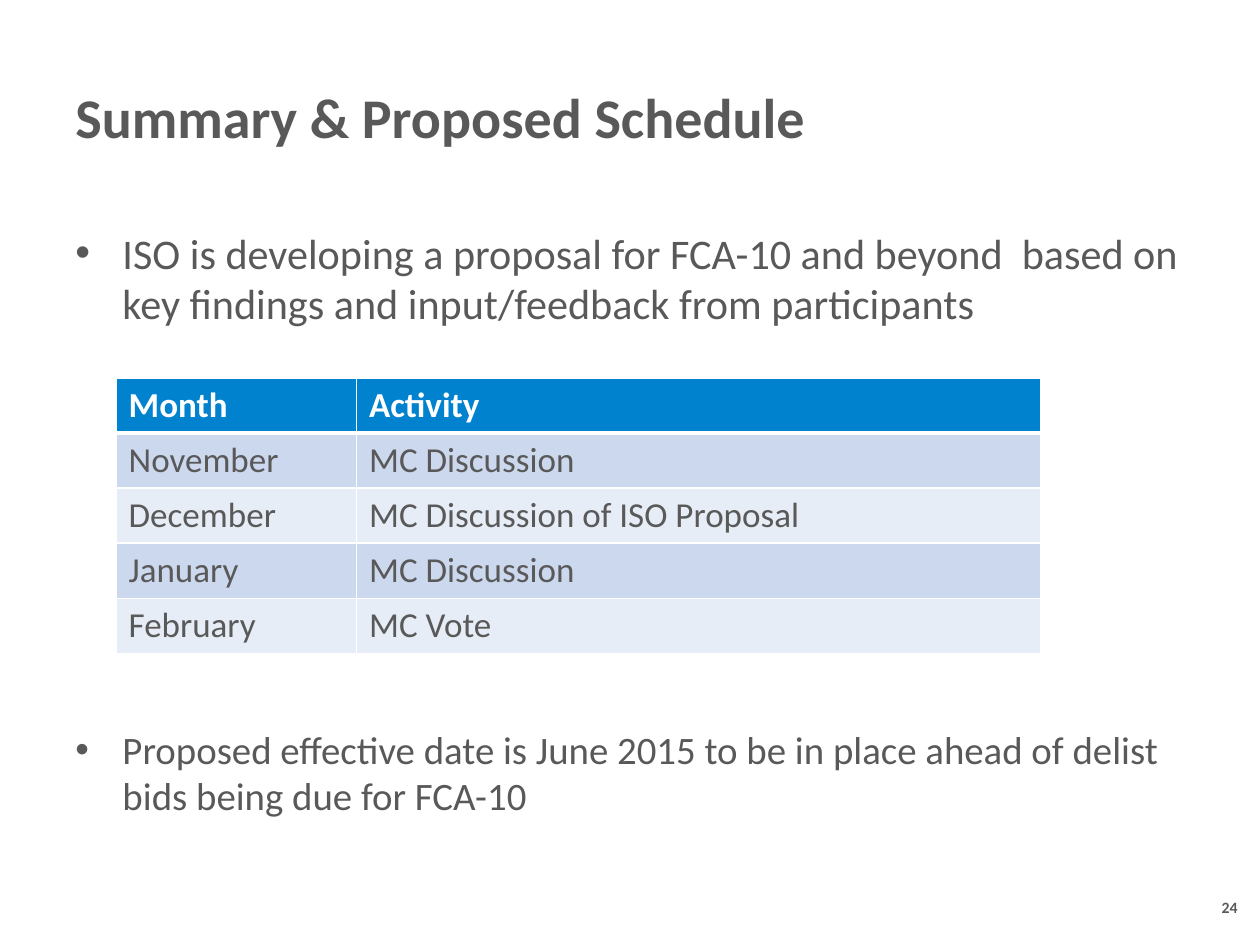
from dataclasses import dataclass

from lxml.etree import SubElement
from pptx import Presentation
from pptx.dml.color import RGBColor
from pptx.enum.text import MSO_ANCHOR, PP_ALIGN
from pptx.oxml.ns import qn
from pptx.util import Cm, Pt


@dataclass(frozen=True)
class Theme:
    font: str = "Calibri"
    ink: str = "595959"
    white: str = "FFFFFF"
    header: str = "0082CF"
    bands: tuple = ("CCD8ED", "E7EDF6")
    title_size: float = 32
    lead_size: float = 24.1
    closing_size: float = 22.2
    table_size: float = 20
    number_size: float = 9


THEME = Theme()

SCHEDULE = [
    ("Month", "Activity"),
    ("November", "MC Discussion"),
    ("December", "MC Discussion of ISO Proposal"),
    ("January", "MC Discussion"),
    ("February", "MC Vote"),
]


def style(paragraph, size, color=THEME.ink, bold=False):
    font = paragraph.font
    font.name, font.size, font.bold = THEME.font, Pt(size), bold
    font.color.rgb = RGBColor.from_string(color)


def add_text(slide, box, text, anchor=MSO_ANCHOR.TOP):
    """Place a wrapping text box; box is left, top, width, height in cm."""
    frame = slide.shapes.add_textbox(*map(Cm, box)).text_frame
    frame.word_wrap = True
    frame.vertical_anchor = anchor
    frame.text = text
    return frame


def add_title(slide, box, text):
    frame = add_text(slide, box, text, MSO_ANCHOR.MIDDLE)
    style(frame.paragraphs[0], THEME.title_size, bold=True)


def add_bullet(slide, box, text, size):
    paragraph = add_text(slide, box, text).paragraphs[0]
    properties = paragraph._p.get_or_add_pPr()
    indent = Cm(0.95)
    properties.set("marL", str(indent))
    properties.set("indent", str(-indent))
    SubElement(properties, qn("a:buFont"), typeface="Arial")
    SubElement(properties, qn("a:buChar"), char="•")
    style(paragraph, size)


def add_page_number(slide, box, number):
    frame = add_text(slide, box, number, MSO_ANCHOR.MIDDLE)
    frame.margin_left = frame.margin_right = 0
    frame.margin_top = frame.margin_bottom = 0
    frame.paragraphs[0].alignment = PP_ALIGN.CENTER
    style(frame.paragraphs[0], THEME.number_size, bold=True)


def add_borders(cell, bottom_width):
    properties = cell._tc.get_or_add_tcPr()
    for side, width in (("L", 1), ("R", 1), ("T", 1), ("B", bottom_width)):
        line = SubElement(properties, qn(f"a:ln{side}"), w=str(Pt(width)))
        fill = SubElement(line, qn("a:solidFill"))
        SubElement(fill, qn("a:srgbClr"), val=THEME.white)


def add_schedule(slide, box, rows, month_share):
    left, top, width, height = map(Cm, box)
    table = slide.shapes.add_table(
        len(rows), len(rows[0]), left, top, width, height).table
    table.horz_banding = False
    month_width = round(width * month_share)
    table.columns[0].width = month_width
    table.columns[1].width = width - month_width

    for row_index, row in enumerate(rows):
        is_header = row_index == 0
        band = THEME.header if is_header else THEME.bands[(row_index - 1) % 2]
        for column_index, text in enumerate(row):
            cell = table.cell(row_index, column_index)
            cell.text = text
            # The rule under the header is shared with the first month row
            add_borders(cell, 3 if is_header else 1)
            if row_index == 1:
                cell._tc.tcPr.find(qn("a:lnT")).set("w", str(Pt(3)))
            cell.fill.solid()
            cell.fill.fore_color.rgb = RGBColor.from_string(band)
            style(cell.text_frame.paragraphs[0], THEME.table_size,
                  THEME.white if is_header else THEME.ink, is_header)


def build_summary_slide(presentation):
    slide = presentation.slides.add_slide(presentation.slide_layouts[6])
    left, width = 1.27, 22.86

    # Title
    add_title(slide, (left, 0.76, width, 3.18), "Summary & Proposed Schedule")

    # Bullets above and below the schedule
    add_bullet(slide, (left, 4.45, width, 2.6),
               "ISO is developing a proposal for FCA-10 and beyond  based on "
               "key findings and input/feedback from participants",
               THEME.lead_size)
    add_bullet(slide, (left, 14.5, width, 2.6),
               "Proposed effective date is June 2015 to be in place ahead of "
               "delist bids being due for FCA-10",
               THEME.closing_size)

    # Schedule
    add_schedule(slide, (2.34, 7.62, 18.64, 5.55), SCHEDULE, 0.26)

    # Page number
    add_page_number(slide, (24.36, 17.91, 0.86, 0.74), "24")


def main():
    presentation = Presentation()
    presentation.slide_width, presentation.slide_height = Cm(25.4), Cm(19.05)
    build_summary_slide(presentation)
    presentation.save("out.pptx")


if __name__ == "__main__":
    main()
